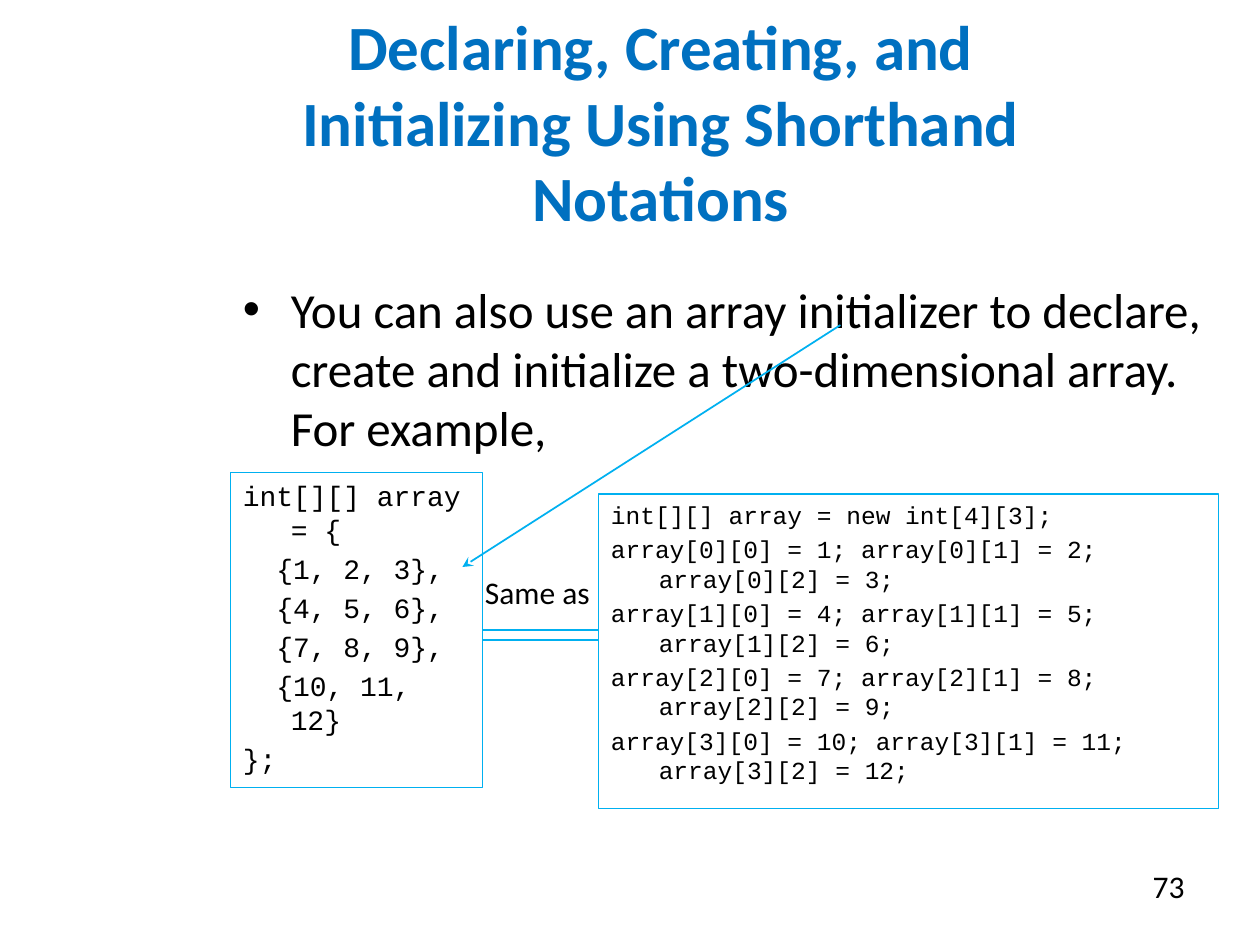
from pptx import Presentation
from pptx.dml.color import RGBColor
from pptx.enum.shapes import MSO_CONNECTOR, MSO_SHAPE
from pptx.enum.text import MSO_ANCHOR, PP_ALIGN
from pptx.oxml.ns import qn
from pptx.util import Inches, Pt
from lxml import etree

BLACK = RGBColor(0x00, 0x00, 0x00)
TITLE_BLUE = RGBColor(0x00, 0x70, 0xC0)
LINE_BLUE = RGBColor(0x00, 0xB0, 0xF0)
LEFT, CENTER, RIGHT = PP_ALIGN.LEFT, PP_ALIGN.CENTER, PP_ALIGN.RIGHT
TOP, MIDDLE = MSO_ANCHOR.TOP, MSO_ANCHOR.MIDDLE
RECTANGLE = MSO_SHAPE.RECTANGLE
STRAIGHT = MSO_CONNECTOR.STRAIGHT
RIGHT_SIDE = 3

INITIALIZER = """int[][] array = {
  {1, 2, 3},
  {4, 5, 6},
  {7, 8, 9},
  {10, 11, 12}
};"""

ASSIGNMENTS = """int[][] array = new int[4][3];
array[0][0] = 1; array[0][1] = 2; array[0][2] = 3;
array[1][0] = 4; array[1][1] = 5; array[1][2] = 6;
array[2][0] = 7; array[2][1] = 8; array[2][2] = 9;
array[3][0] = 10; array[3][1] = 11; array[3][2] = 12;"""


def write(frame, text, size, font="Calibri", color=BLACK, bold=False, align=LEFT,
          anchor=TOP, hanging=False, bullet=None, leading=None):
    """Fill a text frame, one paragraph per line of text."""
    frame.word_wrap = True
    frame.vertical_anchor = anchor
    for number, line in enumerate(text.split("\n")):
        paragraph = frame.paragraphs[0] if number == 0 else frame.add_paragraph()
        paragraph.alignment = align
        if number:
            paragraph.space_before = Pt(0.2 * size)
        if leading:
            paragraph.line_spacing = Pt(leading * size)
        properties = paragraph._p.get_or_add_pPr()
        if hanging:
            properties.set("marL", str(Inches(0.38)))
            properties.set("indent", str(Inches(-0.38)))
        if bullet:
            etree.SubElement(properties, qn("a:buFont"), typeface="Arial")
            etree.SubElement(properties, qn("a:buChar"), char=bullet)
        run = paragraph.add_run()
        run.text = line
        run.font.name = font
        run.font.size = Pt(size)
        run.font.bold = bold
        run.font.color.rgb = color


class SlideBuilder:
    def __init__(self, slide, line_color):
        self.shapes = slide.shapes
        self.line_color = line_color

    def text(self, left, top, width, height, content, size, **style):
        box = self.shapes.add_textbox(Inches(left), Inches(top), Inches(width), Inches(height))
        write(box.text_frame, content, size, **style)

    def code(self, left, top, width, height, content, size):
        box = self.shapes.add_shape(RECTANGLE, Inches(left), Inches(top),
                                    Inches(width), Inches(height))
        box.shadow.inherit = False
        box.fill.background()
        box.line.color.rgb = self.line_color
        box.line.width = Pt(0.75)
        write(box.text_frame, content, size, font="Courier New", hanging=True, leading=1.2)
        return box

    def line(self, start, end, arrow=False):
        connector = self.shapes.add_connector(STRAIGHT, *map(Inches, start + end))
        connector.line.color.rgb = self.line_color
        connector.line.width = Pt(1)
        if arrow:
            etree.SubElement(connector.line._get_or_add_ln(), qn("a:tailEnd"), type="stealth")
        etree.SubElement(connector._element.spPr, qn("a:effectLst"))
        return connector


def main():
    deck = Presentation()
    deck.slide_width, deck.slide_height = Inches(10), Inches(7.5)
    builder = SlideBuilder(deck.slides.add_slide(deck.slide_layouts[6]), LINE_BLUE)

    builder.text(7.17, 6.83, 2.33, 0.52, "73", 18, align=RIGHT)
    builder.text(1.83, 0.25, 6.83, 1.42,
                 "Declaring, Creating, and Initializing Using Shorthand Notations", 36,
                 color=TITLE_BLUE, bold=True, align=CENTER, anchor=MIDDLE)
    builder.text(1.83, 2.17, 8, 1.42,
                 "You can also use an array initializer to declare, create and initialize "
                 "a two-dimensional array. For example,", 28, hanging=True, bullet="•")

    builder.code(4.75, 3.92, 4.92, 2.5, ASSIGNMENTS, 14)
    initializer = builder.code(1.83, 3.75, 2, 2.5, INITIALIZER, 16)

    builder.line((3.83, 5.08), (4.75, 5.08))
    builder.text(3.75, 4.5, 1.08, 0.42, "Same as", 18, hanging=True)
    equals_top = builder.line((3.83, 5), (4.75, 5))
    equals_top.begin_connect(initializer, RIGHT_SIDE)
    builder.line((6.67, 2.58), (3.67, 4.5), arrow=True)

    deck.save("out.pptx")


if __name__ == "__main__":
    main()
